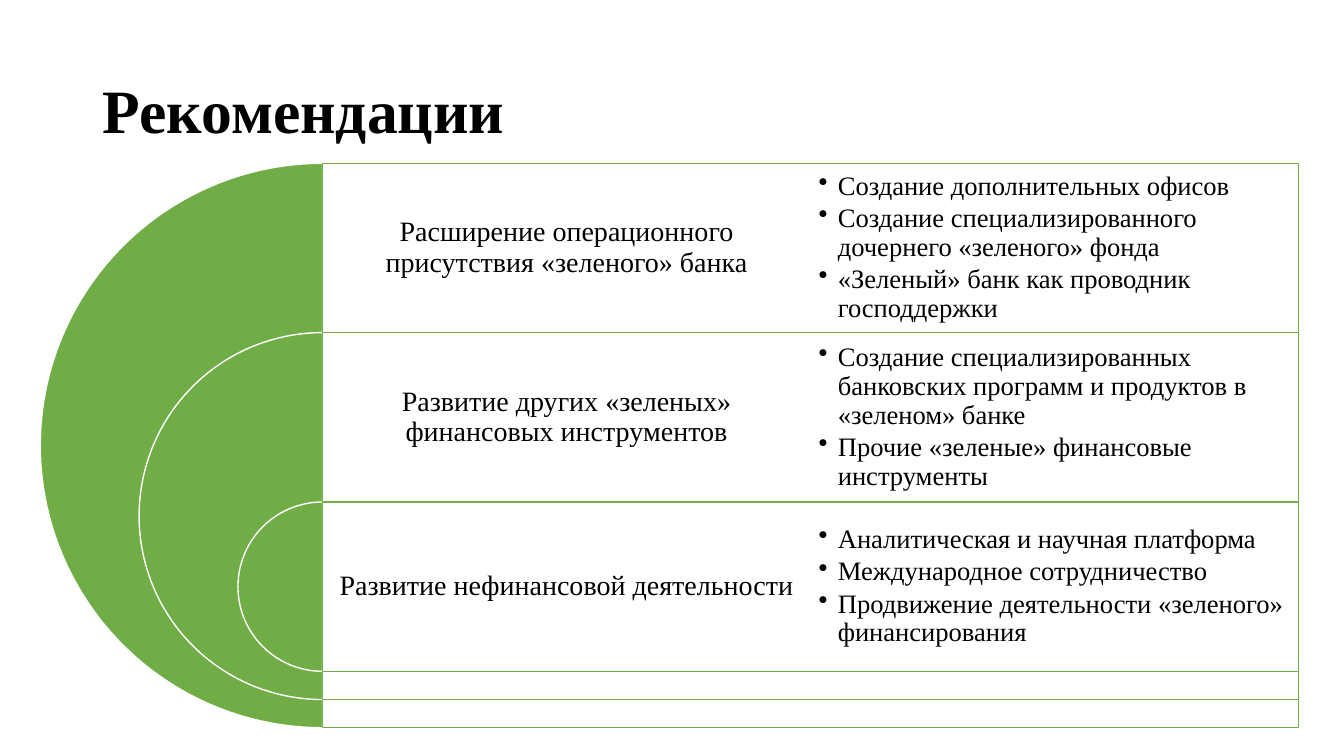
from lxml import etree
from pptx import Presentation
from pptx.dml.color import RGBColor
from pptx.enum.shapes import MSO_SHAPE
from pptx.enum.text import MSO_ANCHOR, PP_ALIGN
from pptx.oxml.ns import qn
from pptx.util import Inches, Pt

PIE, RECTANGLE = MSO_SHAPE.PIE, MSO_SHAPE.RECTANGLE
MIDDLE = MSO_ANCHOR.MIDDLE
LEFT, CENTER = PP_ALIGN.LEFT, PP_ALIGN.CENTER

# Layout of the nested bands, in inches
AXIS_X, TOP = 3.2, 1.62
ROW_HEIGHT, BAND_STEP = 1.68, 0.28
COLUMN_WIDTH = 4.84

RECOMMENDATIONS = [
    ("Расширение операционного присутствия «зеленого» банка",
     ["Создание дополнительных офисов",
      "Создание специализированного дочернего «зеленого» фонда",
      "«Зеленый» банк как проводник господдержки"]),
    ("Развитие других «зеленых» финансовых инструментов",
     ["Создание специализированных банковских программ и продуктов в «зеленом» банке",
      "Прочие «зеленые» финансовые инструменты"]),
    ("Развитие нефинансовой деятельности",
     ["Аналитическая и научная платформа",
      "Международное сотрудничество",
      "Продвижение деятельности «зеленого» финансирования"]),
]


def color(value):
    return RGBColor.from_string(value)


class SlideBuilder:
    font = "Times New Roman"
    ink, green, white = "000000", "70AD47", "FFFFFF"

    def __init__(self, slide):
        self.slide = slide

    def shape(self, kind, left, top, width, height, fill, line):
        shape = self.slide.shapes.add_shape(
            kind, Inches(left), Inches(top), Inches(width), Inches(height))
        shape.shadow.inherit = False
        shape.fill.solid()
        shape.fill.fore_color.rgb = color(fill)
        shape.line.color.rgb = color(line)
        shape.line.width = Pt(1)
        return shape

    def half_disc(self, center_x, top, diameter):
        disc = self.shape(PIE, center_x - diameter / 2, top, diameter, diameter,
                          self.green, self.white)
        # Angles of 90 and 270 degrees leave the left half
        disc.adjustments[0] = 54
        disc.adjustments[1] = 162

    def panel(self, left, top, width, height):
        panel = self.shape(RECTANGLE, left, top, width, height, self.white, self.green)
        tint = panel.fill._xPr.find(qn("a:solidFill"))[0]
        etree.SubElement(tint, qn("a:alpha"), val="90000")

    def text(self, left, top, width, height, lines, size, align=LEFT, bold=False,
             bullet=False, space_after=0, inset=0.08):
        box = self.slide.shapes.add_textbox(
            Inches(left), Inches(top), Inches(width), Inches(height))
        frame = box.text_frame
        frame.word_wrap = True
        frame.vertical_anchor = MIDDLE
        frame.margin_left = frame.margin_right = Inches(inset)
        frame.margin_top = frame.margin_bottom = Inches(0.08)
        for index, line in enumerate(lines):
            paragraph = frame.add_paragraph() if index else frame.paragraphs[0]
            paragraph.alignment = align
            paragraph.line_spacing = 0.9
            paragraph.space_after = Pt(space_after)
            if bullet:
                self.add_bullet(paragraph)
            run = paragraph.add_run()
            run.text = line
            run.font.name = self.font
            run.font.size = Pt(size)
            run.font.bold = bold
            run.font.color.rgb = color(self.ink)

    def add_bullet(self, paragraph):
        properties = paragraph._p.get_or_add_pPr()
        properties.set("marL", str(Inches(0.19)))
        properties.set("indent", str(-Inches(0.19)))
        etree.SubElement(properties, qn("a:buChar"), char="•")


def main():
    presentation = Presentation()
    presentation.slide_width = Inches(13.33)
    presentation.slide_height = Inches(7.5)
    builder = SlideBuilder(presentation.slides.add_slide(presentation.slide_layouts[6]))

    # Heading
    builder.text(0.92, 0.4, 11.5, 1.45, ["Рекомендации"], 44, bold=True, inset=0.1)

    # Nested bands: each starts one row lower and ends one step higher
    for index, (direction, measures) in enumerate(RECOMMENDATIONS):
        rows_left = len(RECOMMENDATIONS) - index
        top = TOP + index * ROW_HEIGHT
        band_height = rows_left * ROW_HEIGHT + (rows_left - 1) * BAND_STEP
        builder.half_disc(AXIS_X, top, band_height)
        builder.panel(AXIS_X, top, 2 * COLUMN_WIDTH, band_height)
        builder.text(AXIS_X, top, COLUMN_WIDTH, ROW_HEIGHT, [direction], 20,
                     align=CENTER, space_after=7)
        builder.text(AXIS_X + COLUMN_WIDTH, top, COLUMN_WIDTH, ROW_HEIGHT, measures, 19,
                     bullet=True, space_after=2.5)

    presentation.save("out.pptx")


if __name__ == "__main__":
    main()
